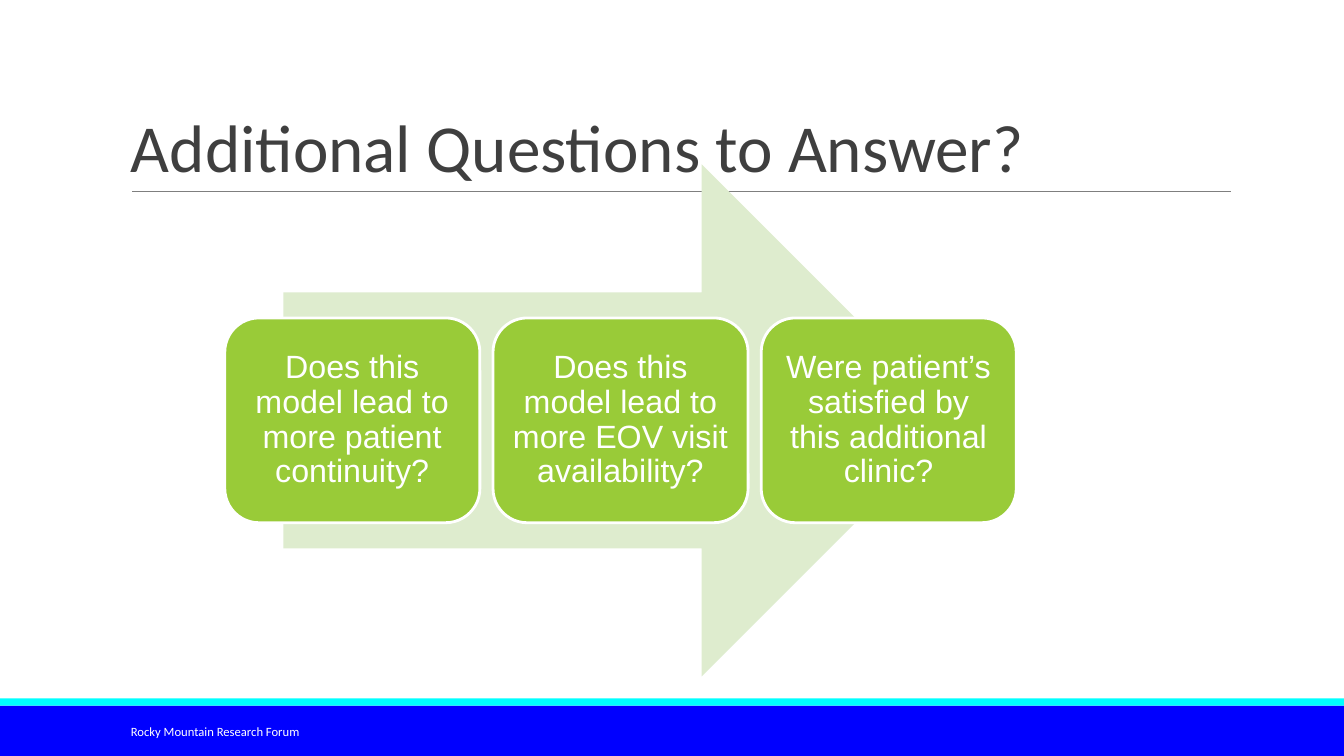
from lxml.etree import SubElement
from pptx import Presentation
from pptx.dml.color import RGBColor
from pptx.enum.shapes import MSO_CONNECTOR as Connector, MSO_SHAPE as Shape
from pptx.enum.text import MSO_ANCHOR as Anchor, PP_ALIGN as Align
from pptx.oxml.ns import qn
from pptx.util import Inches, Pt

TITLE = "Additional Questions to Answer?"
QUESTIONS = [
    "Does this model lead to more patient continuity?",
    "Does this model lead to more EOV visit availability?",
    "Were patient’s satisfied by this additional clinic?",
]
FOOTER = "Rocky Mountain Research Forum"

WHITE = RGBColor(0xFF, 0xFF, 0xFF)
CHARCOAL = RGBColor(0x3F, 0x3F, 0x3F)
GREY = RGBColor(0x7F, 0x7F, 0x7F)
BLUE = RGBColor(0x00, 0x00, 0xFF)
CYAN = RGBColor(0x00, 0xFF, 0xFF)
GREEN = RGBColor(0x99, 0xCB, 0x38)
PALE_GREEN = RGBColor(0xDE, 0xEC, 0xCE)

WIDTH, HEIGHT = 13.33, 7.5
BAND_TOP, STRIPE_HEIGHT = 7, 0.07
MARGIN = 1.2
RULE_LEFT, RULE_RIGHT, RULE_Y = 1.31, 12.21, 1.9
ARROW_LEFT, ARROW_TOP, ARROW_WIDTH, ARROW_HEIGHT = 2.81, 1.63, 6.69, 5.08
CARD_LEFT, CARD_STEP, CARD_WIDTH = 2.23, 2.66, 2.53
CARD_HEIGHT = ARROW_HEIGHT * 0.4
CARD_TOP = ARROW_TOP + (ARROW_HEIGHT - CARD_HEIGHT) / 2


def add_block(slide, kind, box, fill, outline=None):
    block = slide.shapes.add_shape(kind, *map(Inches, box))
    block.shadow.inherit = False
    block.fill.solid()
    block.fill.fore_color.rgb = fill
    if outline is None:
        block.line.fill.background()
    else:
        block.line.color.rgb = outline
        block.line.width = Pt(2)
    return block


def write(holder, words, size, font, color, anchor, spacing=1.0, align=Align.LEFT):
    frame = holder.text_frame
    frame.word_wrap = True
    frame.vertical_anchor = anchor
    paragraph = frame.paragraphs[0]
    paragraph.alignment = align
    paragraph.line_spacing = spacing
    run = paragraph.add_run()
    run.text = words
    run.font.size = Pt(size)
    run.font.name = font
    run.font.color.rgb = color
    return frame


def main():
    deck = Presentation()
    deck.slide_width, deck.slide_height = Inches(WIDTH), Inches(HEIGHT)
    slide = deck.slides.add_slide(deck.slide_layouts[6])

    add_block(slide, Shape.RECTANGLE, (0, BAND_TOP, WIDTH, HEIGHT - BAND_TOP), BLUE)
    add_block(slide, Shape.RECTANGLE, (0, BAND_TOP - STRIPE_HEIGHT, WIDTH, STRIPE_HEIGHT), CYAN)

    rule = slide.shapes.add_connector(
        Connector.STRAIGHT, *map(Inches, (RULE_LEFT, RULE_Y, RULE_RIGHT, RULE_Y)))
    rule.line.color.rgb = GREY
    rule.line.width = Pt(0.75)
    SubElement(rule.element.spPr, qn("a:effectLst"))

    title = slide.shapes.add_textbox(*map(Inches, (MARGIN, 0.31, 11, 1.59)))
    write(title, TITLE, 48, "Calibri", CHARCOAL, Anchor.BOTTOM, 0.85)
    footer = slide.shapes.add_textbox(*map(Inches, (MARGIN, 7.06, 2.7, 0.4)))
    write(footer, FOOTER, 9, "Calibri", WHITE, Anchor.MIDDLE)

    add_block(slide, Shape.RIGHT_ARROW,
              (ARROW_LEFT, ARROW_TOP, ARROW_WIDTH, ARROW_HEIGHT), PALE_GREEN)
    for column, question in enumerate(QUESTIONS):
        left = CARD_LEFT + column * CARD_STEP
        card = add_block(slide, Shape.ROUNDED_RECTANGLE,
                         (left, CARD_TOP, CARD_WIDTH, CARD_HEIGHT), GREEN, WHITE)
        frame = write(card, question, 23, "Arial", WHITE, Anchor.MIDDLE, 0.9, Align.CENTER)
        frame.margin_left = frame.margin_right = Inches(0.09)

    deck.save("out.pptx")


if __name__ == "__main__":
    main()
